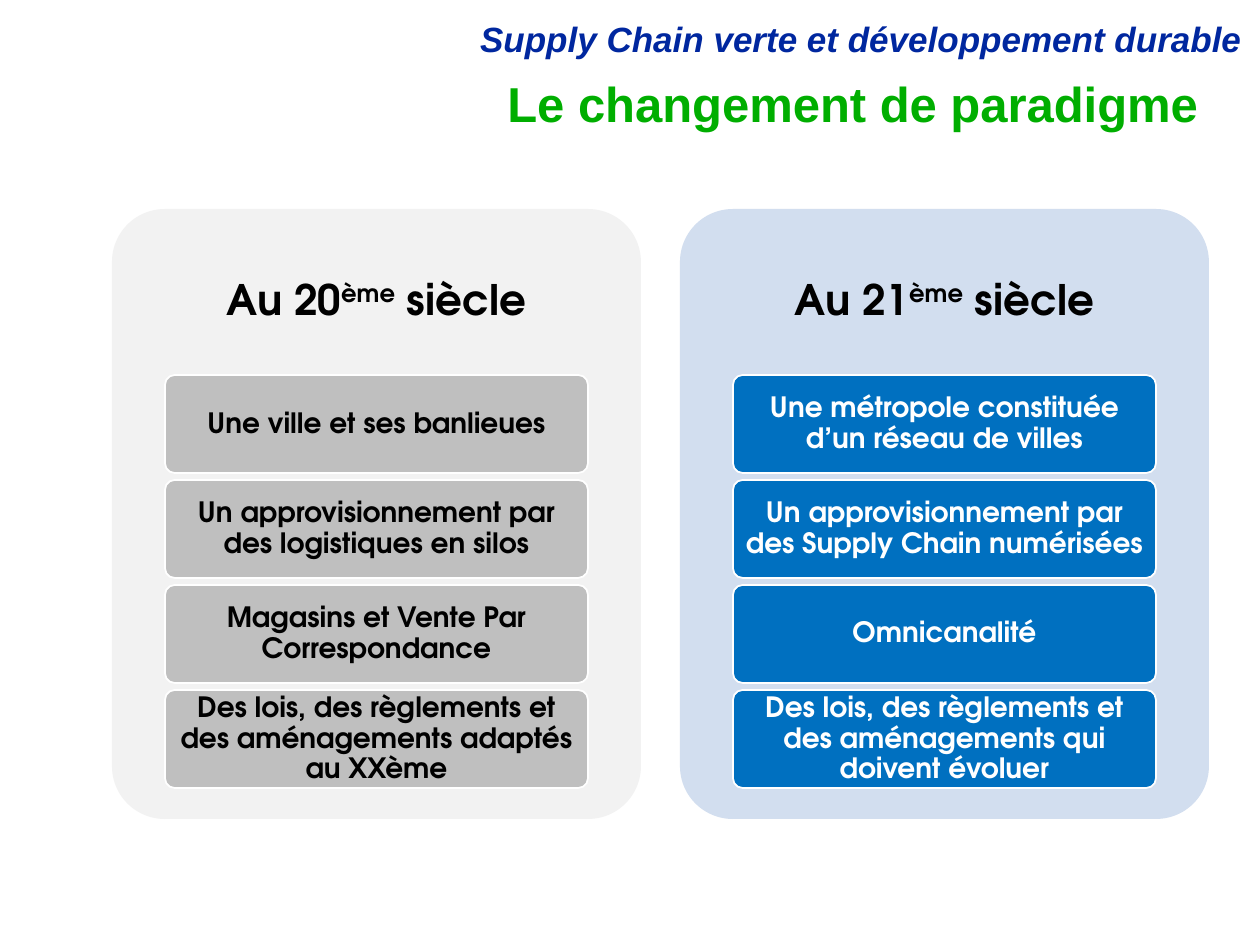
from typing import NamedTuple

from pptx import Presentation
from pptx.dml.color import RGBColor
from pptx.enum.shapes import MSO_SHAPE
from pptx.enum.text import MSO_ANCHOR, PP_ALIGN
from pptx.util import Emu, Pt

SCALE = 914400 / 126
COLORS = {
    "navy": "00279F", "green": "00AE00", "black": "000000", "white": "FFFFFF",
    "pale": "F2F2F2", "gray": "BFBFBF", "sky": "D2DEEF", "blue": "0070C0",
}
SANS, ROUND = "Arial", "TeX Gyre Adventor"
TOP, WIDTH, HEIGHT = 209, 529, 610
CARD_TOP, CARD_STEP = 375, 105


class Box(NamedTuple):
    left: int
    top: int
    width: int
    height: int


class Style(NamedTuple):
    font: str
    size: int
    color: str
    italic: bool = False


class Run(NamedTuple):
    text: str
    raised: bool = False


class Panel(NamedTuple):
    left: int
    century: str
    fill: str
    card: str
    ink: str
    items: tuple[str, ...]


PANELS = (
    Panel(112, "20", "pale", "gray", "black", (
        "Une ville et ses banlieues",
        "Un approvisionnement par des logistiques en silos",
        "Magasins et Vente Par Correspondance",
        "Des lois, des règlements et des aménagements adaptés au XXème",
    )),
    Panel(680, "21", "sky", "blue", "white", (
        "Une métropole constituée d’un réseau de villes",
        "Un approvisionnement par des Supply Chain numérisées",
        "Omnicanalité",
        "Des lois, des règlements et des aménagements qui doivent évoluer",
    )),
)


def px(length: int) -> Emu:
    return Emu(round(length * SCALE))


def rgb(name: str) -> RGBColor:
    return RGBColor.from_string(COLORS[name])


def place(shape, box: Box) -> None:
    shape.left, shape.top, shape.width, shape.height = map(px, box)


def write(shape, runs: list[Run], style: Style, align: PP_ALIGN,
          pad: tuple[int, int], anchor: MSO_ANCHOR = MSO_ANCHOR.MIDDLE) -> None:
    """Fill the shape with one bold paragraph; pad is (sides, top and bottom)."""
    frame = shape.text_frame
    frame.word_wrap = True
    frame.vertical_anchor = anchor
    frame.margin_left = frame.margin_right = px(pad[0])
    frame.margin_top = frame.margin_bottom = px(pad[1])
    para = frame.paragraphs[0]
    para.alignment = align
    para.line_spacing = 0.9
    for part in runs:
        run = para.add_run()
        run.text = part.text
        font = run.font
        font.name, font.size = style.font, Pt(style.size)
        font.bold, font.italic = True, style.italic
        font.color.rgb = rgb(style.color)
        if part.raised:
            font._element.set("baseline", "30000")


def add_round(slide, box: Box, fill: str, line: str | None = None):
    shape = slide.shapes.add_shape(MSO_SHAPE.ROUNDED_RECTANGLE, *map(px, box))
    shape.adjustments[0] = 0.1
    shape.shadow.inherit = False
    shape.fill.solid()
    shape.fill.fore_color.rgb = rgb(fill)
    if line:
        shape.line.color.rgb = rgb(line)
        shape.line.width = Pt(1)
    else:
        shape.line.fill.background()
    return shape


def add_panel(slide, panel: Panel) -> None:
    add_round(slide, Box(panel.left, TOP, WIDTH, HEIGHT), panel.fill)
    head = slide.shapes.add_textbox(
        *map(px, Box(panel.left + 5, TOP + 6, WIDTH - 10, 173)))
    runs = [Run(f"Au {panel.century}"), Run("ème", True), Run(" siècle")]
    write(head, runs, Style(ROUND, 24, "black"), PP_ALIGN.CENTER, (12, 12))
    for row, text in enumerate(panel.items):
        box = Box(panel.left + 53, CARD_TOP + row * CARD_STEP, 423, 98)
        card = add_round(slide, box, panel.card, "white")
        write(card, [Run(text)], Style(ROUND, 16, panel.ink),
              PP_ALIGN.CENTER, (5, 4))


def main() -> None:
    deck = Presentation()
    deck.slide_width, deck.slide_height = px(1260), px(945)
    slide = deck.slides.add_slide(deck.slide_layouts[5])

    theme = slide.shapes.add_textbox(*map(px, Box(237, 16, 1018, 50)))
    write(theme, [Run("Supply Chain verte et développement durable")],
          Style(SANS, 20, "navy", True), PP_ALIGN.RIGHT, (13, 6),
          MSO_ANCHOR.TOP)

    title = slide.shapes.title
    place(title, Box(213, 75, 998, 63))
    write(title, [Run("Le changement de paradigme")],
          Style(SANS, 28, "green"), PP_ALIGN.RIGHT, (13, 6))

    for panel in PANELS:
        add_panel(slide, panel)
    deck.save("out.pptx")


if __name__ == "__main__":
    main()
